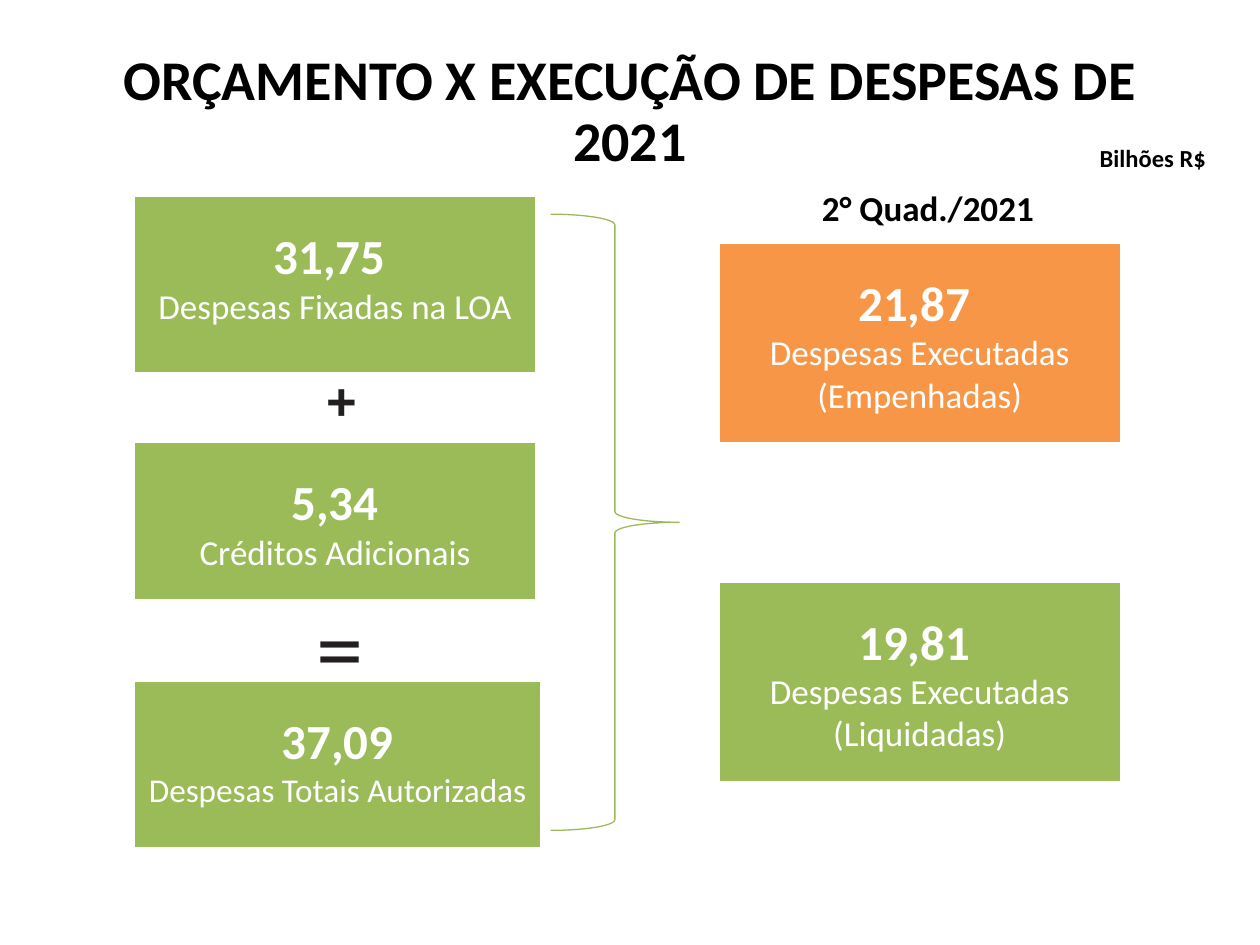
from pptx import Presentation
from pptx.dml.color import RGBColor
from pptx.enum.shapes import MSO_SHAPE
from pptx.enum.text import MSO_ANCHOR, PP_ALIGN
from pptx.util import Inches, Pt

GREEN, ORANGE, WHITE, BLACK, DARK = "9BBB59", "F79646", "FFFFFF", "000000", "231F20"
LEFT, RIGHT, WIDE = 1.06, 5.7, 3.2


def color(code):
    """Turn a hex string into a colour."""
    return RGBColor.from_string(code)


def place(shape, left, top, width, height):
    """Set a shape's position and size in inches."""
    shape.left, shape.top = Inches(left), Inches(top)
    shape.width, shape.height = Inches(width), Inches(height)


def style(par, size, code, bold=True, face="Calibri"):
    """Centre a paragraph and format its runs."""
    par.alignment = PP_ALIGN.CENTER
    for run in par.runs:
        font = run.font
        font.size, font.bold, font.name = Pt(size), bold, face
        font.color.rgb = color(code)


def inset(frame, top=0):
    """Clear the margins of a text frame, keeping a top gap."""
    frame.margin_left = frame.margin_right = frame.margin_bottom = 0
    frame.margin_top = Inches(top)


def heading(slide, text):
    """Fill and place the title."""
    title = slide.shapes.title
    place(title, 0.76, 0.36, 8.48, 1.07)
    frame = title.text_frame
    frame.text = text
    frame.vertical_anchor = MSO_ANCHOR.MIDDLE
    par = frame.paragraphs[0]
    par.line_spacing = 0.9
    style(par, 32, BLACK)


def label(slide, text, area, size, code=BLACK, bold=True, face="Calibri"):
    """Add a centred one-line text."""
    box = slide.shapes.add_textbox(*map(Inches, area))
    frame = box.text_frame
    frame.text = text
    frame.word_wrap = True
    frame.vertical_anchor = MSO_ANCHOR.MIDDLE
    inset(frame)
    style(frame.paragraphs[0], size, code, bold, face)


def card(slide, area, fill, value, lines, size=20):
    """Add a filled box with a value above its caption."""
    box = slide.shapes.add_shape(MSO_SHAPE.RECTANGLE, *map(Inches, area))
    box.shadow.inherit = False
    box.fill.solid()
    box.fill.fore_color.rgb = color(fill)
    box.line.color.rgb = color(WHITE)
    box.line.width = Pt(2)
    frame = box.text_frame
    frame.text = "\n".join([value, *lines])
    frame.word_wrap = True
    frame.vertical_anchor = MSO_ANCHOR.TOP
    inset(frame, 0.24)
    first, *rest = frame.paragraphs
    style(first, 28, WHITE)
    for par in rest:
        style(par, size, WHITE, False)


def brace(slide, area):
    """Add the brace that joins the two columns."""
    shape = slide.shapes.add_shape(MSO_SHAPE.RIGHT_BRACE, *map(Inches, area))
    shape.shadow.inherit = False
    shape.fill.background()
    shape.line.color.rgb = color(GREEN)
    shape.line.width = Pt(0)


def main():
    """Build the slide and save it."""
    deck = Presentation()
    deck.slide_width, deck.slide_height = Inches(10), Inches(7.5)
    slide = deck.slides.add_slide(deck.slide_layouts[5])
    heading(slide, "ORÇAMENTO X EXECUÇÃO DE DESPESAS DE 2021")
    label(slide, "Bilhões R$", (8.7, 1.15, 0.9, 0.21), 14)
    label(slide, "2° Quad./2021", (5.79, 1.43, 3.15, 0.44), 20)

    card(slide, (LEFT, 1.55, WIDE, 1.42), GREEN, "31,75 ", ["Despesas Fixadas na LOA"])
    card(slide, (LEFT, 3.5, WIDE, 1.27), GREEN, "5,34", ["Créditos Adicionais"])
    card(slide, (LEFT, 5.4, 3.24, 1.34), GREEN, "37,09",
         ["Despesas Totais Autorizadas"], 19)
    label(slide, "+", (2.41, 2.92, 0.6, 0.5), 30, DARK, face="Arial")
    label(slide, "=", (2.4, 4.67, 0.6, 0.9), 54, DARK, False)

    brace(slide, (4.37, 1.7, 1.02, 4.89))
    done = "Despesas Executadas"
    card(slide, (RIGHT, 1.92, WIDE, 1.6), ORANGE, "21,87 ", [done, "(Empenhadas)"])
    card(slide, (RIGHT, 4.61, WIDE, 1.6), GREEN, "19,81 ", [done, "(Liquidadas)"])
    deck.save("out.pptx")


if __name__ == "__main__":
    main()
